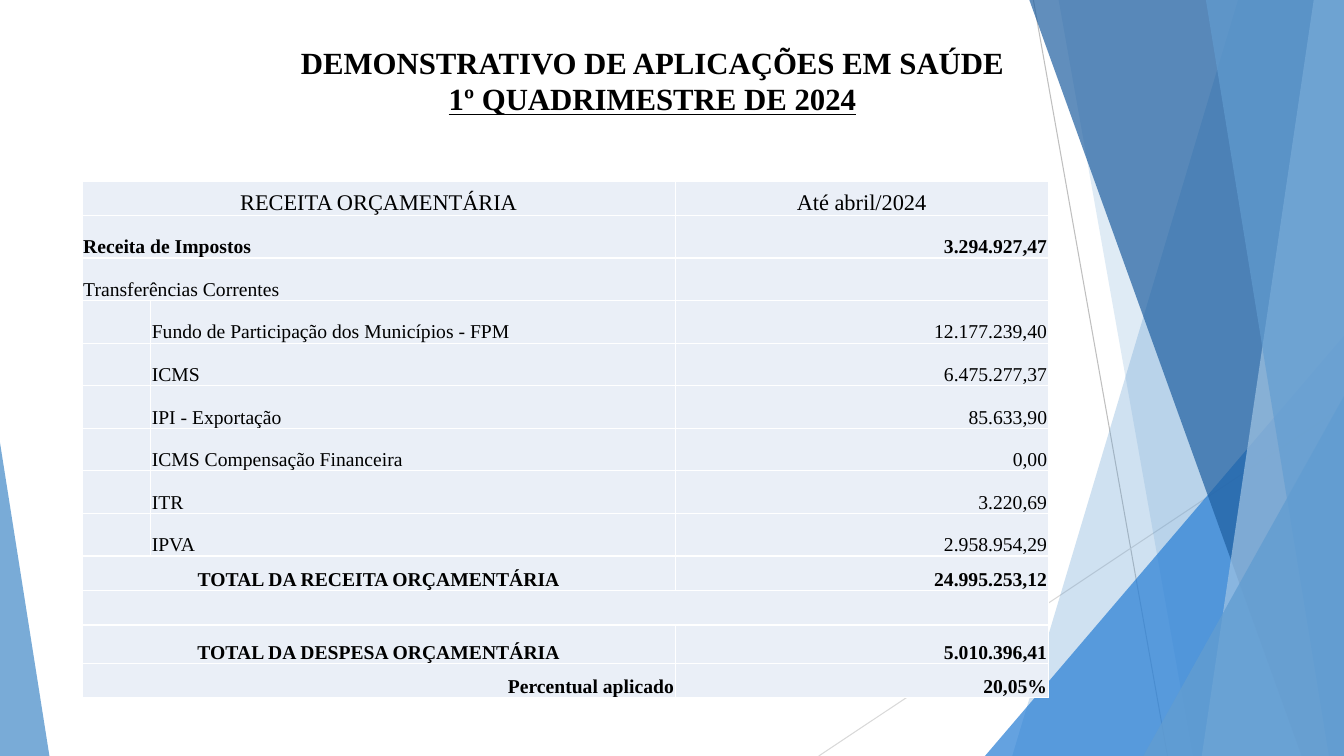
from lxml.etree import SubElement
from pptx import Presentation
from pptx.dml.color import RGBColor
from pptx.enum.shapes import MSO_CONNECTOR, MSO_SHAPE
from pptx.enum.text import MSO_ANCHOR, PP_ALIGN
from pptx.oxml.ns import qn
from pptx.util import Inches, Pt

WIDTH, HEIGHT = Inches(13.33), Inches(7.5)
FONT = "Times New Roman"
LEFT, CENTER, RIGHT = PP_ALIGN.LEFT, PP_ALIGN.CENTER, PP_ALIGN.RIGHT

# Positions are percentages of the slide's width (x) and height (y).
LINES = [((76.89, 0), (86.87, 100), "BFBFBF"),
         ((100, 53.73), (60.92, 100), "D9D9D9")]
# Bands reach the right edge: x at top, x at bottom, colour, opacity.
BACK_BANDS = [(92.12, 75.32, "629DD1", 30), (78.77, 88.75, "629DD1", 20)]
FRONT_BANDS = [(76.59, 96.85, "1F5FA0", 70), (97.75, 89.42, "A1C4E3", 70),
               (89.72, 98.87, "629DD1", 65)]

COLUMN_WEIGHTS = [68, 520, 370]
ROW_WEIGHTS = [34] + [42] * 8 + [34, 34, 38, 34]
# Each row: label, value, column where the label starts, alignment, bold.
REVENUE_ROWS = [
    ("RECEITA ORÇAMENTÁRIA", "Até abril/2024", 0, CENTER, False),
    ("Receita de Impostos", "3.294.927,47", 0, LEFT, True),
    ("Transferências Correntes", "", 0, LEFT, False),
    ("Fundo de Participação dos Municípios - FPM", "12.177.239,40", 1, LEFT, False),
    ("ICMS", "6.475.277,37", 1, LEFT, False),
    ("IPI - Exportação", "85.633,90", 1, LEFT, False),
    ("ICMS Compensação Financeira", "0,00", 1, LEFT, False),
    ("ITR", "3.220,69", 1, LEFT, False),
    ("IPVA", "2.958.954,29", 1, LEFT, False),
    ("TOTAL DA RECEITA ORÇAMENTÁRIA", "24.995.253,12", 0, CENTER, True),
    ("", "", 0, LEFT, False),
    ("TOTAL DA DESPESA ORÇAMENTÁRIA", "5.010.396,41", 0, CENTER, True),
    ("Percentual aplicado", "20,05%", 0, RIGHT, True),
]
SPACER_ROW = 10


def color(hex_code):
    return RGBColor.from_string(hex_code)


def x(percent):
    return round(WIDTH * percent / 100)


def y(percent):
    return round(HEIGHT * percent / 100)


def paint(shape, hex_code, opacity):
    shape.shadow.inherit = False
    shape.line.fill.background()
    shape.fill.solid()
    shape.fill.fore_color.rgb = color(hex_code)
    tint = shape.fill._xPr.find(qn("a:solidFill"))[0]
    SubElement(tint, qn("a:alpha"), val=str(opacity * 1000))


def add_line(slide, start, end, hex_code):
    line = slide.shapes.add_connector(MSO_CONNECTOR.STRAIGHT, x(start[0]), y(start[1]),
                                      x(end[0]), y(end[1]))
    line.line.color.rgb = color(hex_code)
    line.line.width = Pt(0.75)
    SubElement(line._element.spPr, qn("a:effectLst"))


def add_band(slide, top_x, bottom_x, hex_code, opacity):
    outline = slide.shapes.build_freeform(x(top_x), 0)
    outline.add_line_segments([(WIDTH, 0), (WIDTH, HEIGHT), (x(bottom_x), HEIGHT)])
    paint(outline.convert_to_shape(), hex_code, opacity)


def add_corner(slide, left, right, top, apex, hex_code, opacity):
    """Add a right triangle on the bottom edge, its apex at 0 (left) or 1 (right)."""
    corner = slide.shapes.add_shape(MSO_SHAPE.ISOSCELES_TRIANGLE, x(left), y(top),
                                    x(right - left), y(100 - top))
    corner.adjustments[0] = apex
    paint(corner, hex_code, opacity)


def style_paragraph(paragraph, size, bold, align):
    paragraph.alignment = align
    paragraph.font.name = FONT
    paragraph.font.size = Pt(size)
    paragraph.font.bold = bold
    paragraph.font.color.rgb = color("000000")


def add_title(slide):
    frame = slide.shapes.add_textbox(x(13.28), y(5.07), x(70.52), y(19.2)).text_frame
    frame.word_wrap = True
    heading = frame.paragraphs[0]
    style_paragraph(heading, 22, True, CENTER)
    heading.add_run().text = "DEMONSTRATIVO DE APLICAÇÕES EM SAÚDE"
    heading.add_line_break()
    period = heading.add_run()
    period.text = "1º QUADRIMESTRE DE 2024"
    period.font.underline = True


def style_cell(cell):
    cell.vertical_anchor = MSO_ANCHOR.BOTTOM
    cell.margin_left = cell.margin_right = cell.margin_top = Inches(0.01)
    cell.margin_bottom = 0
    for side in ("lnL", "lnR", "lnT", "lnB"):
        border = SubElement(cell._tc.get_or_add_tcPr(), qn(f"a:{side}"), w=str(Pt(1)))
        SubElement(SubElement(border, qn("a:solidFill")), qn("a:srgbClr"), val="FFFFFF")
    cell.fill.solid()
    cell.fill.fore_color.rgb = color("EAEFF7")


def write_cell(cell, text, size, bold, align):
    cell.text = text
    style_paragraph(cell.text_frame.paragraphs[0], size, bold, align)


def share_out(tracks, weights, total):
    return [(track, round(total * weight / sum(weights)))
            for track, weight in zip(tracks, weights)]


def add_revenue_table(slide):
    width, height = x(71.87), y(68.4)
    table = slide.shapes.add_table(len(ROW_WEIGHTS), len(COLUMN_WEIGHTS),
                                   x(6.12), y(23.93), width, height).table
    table.first_row = table.horz_banding = False
    for column, column_width in share_out(table.columns, COLUMN_WEIGHTS, width):
        column.width = column_width
    for row, row_height in share_out(table.rows, ROW_WEIGHTS, height):
        row.height = row_height
    for cell in table.iter_cells():
        style_cell(cell)
    for r, (label, value, start, align, bold) in enumerate(REVENUE_ROWS):
        size = 16 if r == 0 else 14
        write_cell(table.cell(r, start), label, size, bold, align)
        write_cell(table.cell(r, 2), value, size, bold, CENTER if r == 0 else RIGHT)
        if start == 0:
            table.cell(r, 0).merge(table.cell(r, 2 if r == SPACER_ROW else 1))


def main():
    deck = Presentation()
    deck.slide_width, deck.slide_height = WIDTH, HEIGHT
    slide = deck.slides.add_slide(deck.slide_layouts[6])
    for line in LINES:
        add_line(slide, *line)
    for band in BACK_BANDS:
        add_band(slide, *band)
    add_corner(slide, 73.29, 100, 44.4, 1, "297FD5", 72)
    for band in FRONT_BANDS:
        add_band(slide, *band)
    add_corner(slide, 85.07, 100, 52.4, 1, "629DD1", 80)
    add_corner(slide, 0, 3.68, 58.53, 0, "629DD1", 85)
    add_title(slide)
    add_revenue_table(slide)
    deck.save("out.pptx")


if __name__ == "__main__":
    main()
